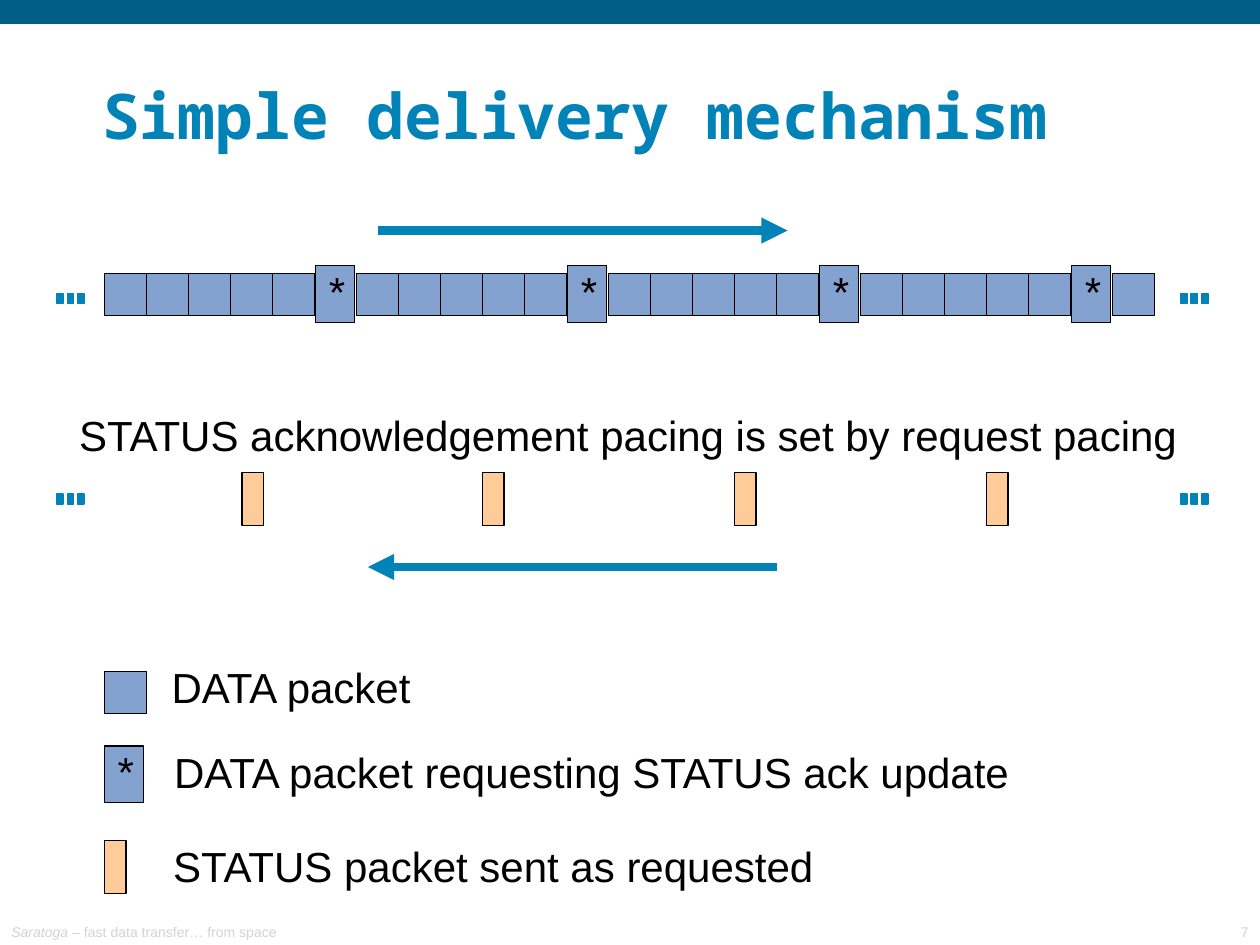
from pptx import Presentation
from pptx.dml.color import RGBColor
from pptx.enum.shapes import MSO_CONNECTOR as Connector, MSO_SHAPE as Shape
from pptx.enum.text import MSO_ANCHOR as Anchor, MSO_AUTO_SIZE as AutoSize, PP_ALIGN as Align
from pptx.oxml.ns import qn
from pptx.util import Inches, Pt
from lxml import etree

BLUE, DARK_BLUE, BLACK, GRAY = "0183B7", "015F85", "000000", "D3D3D3"
DATA_FILL, STATUS_FILL = "83A2CF", "FFCC99"
CELL = 1 / 3
LEFT = 0.83
DATA_COUNT = 25
REQUEST_EVERY = 6
TIGHT = (0.09, 0.04)


def color(hex_string):
    return RGBColor.from_string(hex_string)


def add_rect(page, left, top, width, height, fill, line=BLACK):
    box = page.shapes.add_shape(
        Shape.RECTANGLE, Inches(left), Inches(top), Inches(width), Inches(height))
    box.shadow.inherit = False
    box.fill.solid()
    box.fill.fore_color.rgb = color(fill)
    if line:
        box.line.color.rgb = color(line)
        box.line.width = Pt(0.75)
    else:
        box.line.fill.background()
    return box


def write(box, runs, size, hex_color=BLACK, font="Arial", bold=False, align=Align.CENTER,
          anchor=Anchor.TOP, insets=(0.1, 0.05), spacing=None, wrap=False):
    """Fill a box with one paragraph of (text, italic) runs."""
    frame = box.text_frame
    frame.word_wrap = wrap
    frame.auto_size = AutoSize.NONE if wrap else AutoSize.SHAPE_TO_FIT_TEXT
    frame.vertical_anchor = anchor
    frame.margin_left = frame.margin_right = Inches(insets[0])
    frame.margin_top = frame.margin_bottom = Inches(insets[1])
    para = frame.paragraphs[0]
    para.alignment = align
    if spacing:
        para.line_spacing = spacing
    for text, italic in runs:
        span = para.add_run()
        span.text = text
        span.font.size = Pt(size)
        span.font.name = font
        span.font.bold = bold
        span.font.italic = italic
        span.font.color.rgb = color(hex_color)


def add_text(page, left, top, width, height, runs, size, **style):
    box = page.shapes.add_textbox(Inches(left), Inches(top), Inches(width), Inches(height))
    write(box, runs, size, **style)


def add_label(page, left, top, width, text):
    add_text(page, left, top, width, 0.46, [(text, False)], 24, spacing=0.9)


def add_data(page, left, top):
    add_rect(page, left, top, CELL, CELL, DATA_FILL)


def add_request(page, left, top):
    box = add_rect(page, left, top, 0.31, 0.45, DATA_FILL)
    write(box, [("*", True)], 24, anchor=Anchor.MIDDLE, insets=TIGHT, spacing=0.9)


def add_status(page, left, top):
    add_rect(page, left, top, 0.17, 0.42, STATUS_FILL)


def add_dots(page, left, top):
    for index in range(3):
        add_rect(page, left + index / 12, top, 0.05, 0.08, BLUE, BLUE)


def add_arrow(page, start, end, y):
    arrow = page.shapes.add_connector(
        Connector.STRAIGHT, Inches(start), Inches(y), Inches(end), Inches(y))
    arrow.line.color.rgb = color(BLUE)
    arrow.line.width = Pt(5)
    line = arrow.line._get_or_add_ln()
    etree.SubElement(line, qn("a:tailEnd")).set("type", "triangle")
    etree.SubElement(arrow._element.spPr, qn("a:effectLst"))


def main():
    deck = Presentation()
    deck.slide_width, deck.slide_height = Inches(10), Inches(7.5)
    page = deck.slides.add_slide(deck.slide_layouts[6])

    # Top band, footer and title
    add_rect(page, 0, 0, 10, 0.19, DARK_BLUE, None)
    footer = dict(hex_color=GRAY, anchor=Anchor.BOTTOM, insets=TIGHT)
    add_text(page, 0, 7.28, 2.3, 0.22,
             [("Saratoga", True), (" – fast data transfer… from space", False)],
             8, align=Align.LEFT, **footer)
    add_text(page, 9.68, 7.28, 0.32, 0.22, [("7", False)], 8, align=Align.RIGHT, **footer)
    add_text(page, 0.72, 0.33, 8.91, 0.92, [("Simple delivery mechanism", False)], 36,
             hex_color=BLUE, font="Noto Sans Mono", bold=True, align=Align.LEFT,
             anchor=Anchor.BOTTOM, insets=TIGHT, wrap=True)

    # Data stream, every sixth packet requesting a status
    for index in range(DATA_COUNT):
        left = LEFT + index * CELL
        if index % REQUEST_EVERY == REQUEST_EVERY - 1:
            add_request(page, left + 0.01, 2.11)
        else:
            add_data(page, left, 2.17)
    add_arrow(page, 3, 6.25, 1.83)

    # Status stream going back
    for left in (1.92, 3.83, 5.83, 7.83):
        add_status(page, left, 3.75)
    add_arrow(page, 6.17, 2.92, 4.5)
    add_label(page, 0.48, 3.25, 9.01, "STATUS acknowledgement pacing is set by request pacing")

    # Both streams continue on each side
    for top in (2.33, 3.92):
        for left in (0.45, 9.37):
            add_dots(page, left, top)

    # Legend
    add_data(page, LEFT, 5.33)
    add_label(page, 1.25, 5.25, 2.12, "DATA packet")
    add_request(page, LEFT, 5.92)
    add_label(page, 1.25, 5.92, 6.89, "DATA packet requesting STATUS ack update")
    add_status(page, LEFT, 6.67)
    add_label(page, 1.25, 6.67, 5.33, "STATUS packet sent as requested")

    deck.save("out.pptx")


if __name__ == "__main__":
    main()
